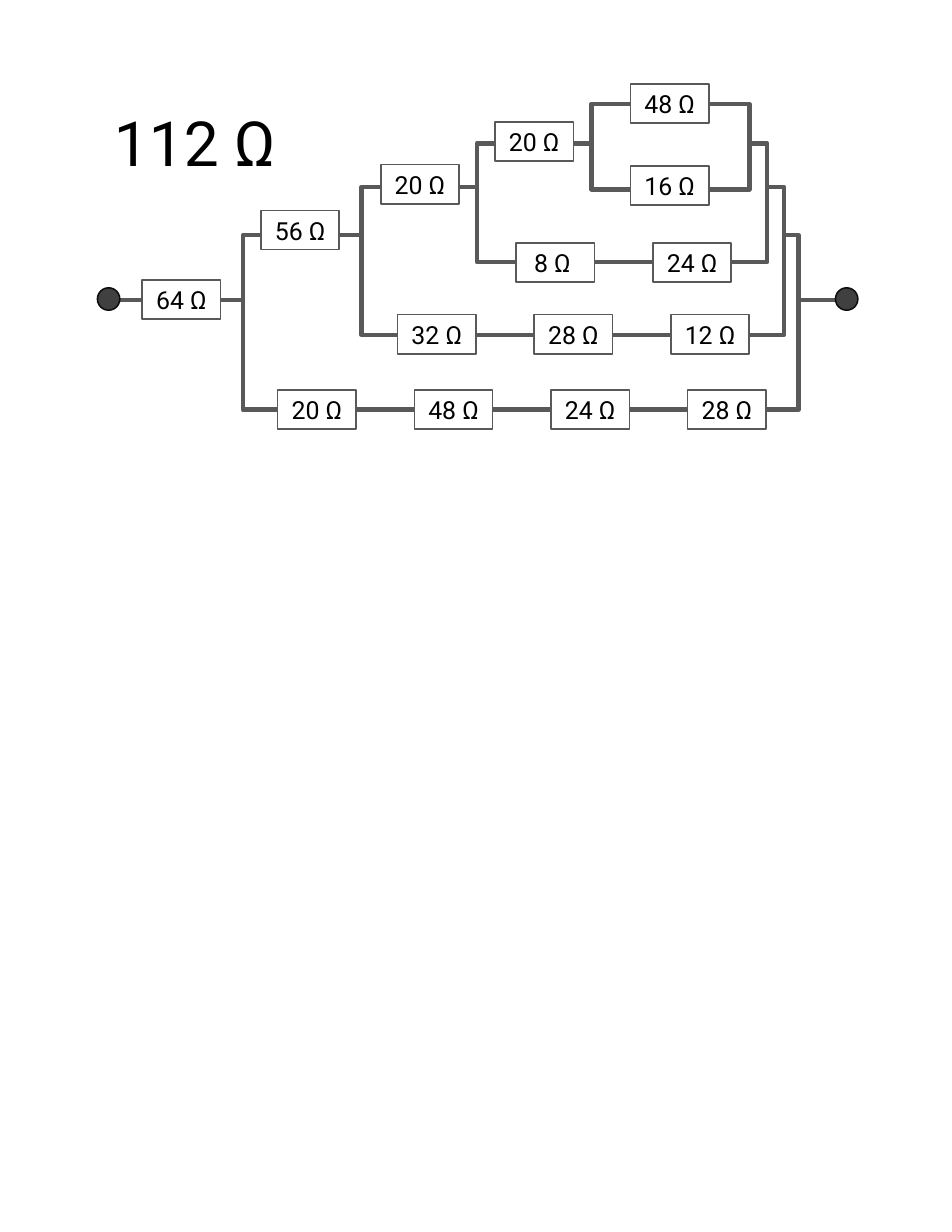
from pptx import Presentation
from pptx.dml.color import RGBColor
from pptx.enum.shapes import MSO_CONNECTOR, MSO_SHAPE
from pptx.enum.text import MSO_ANCHOR, PP_ALIGN
from pptx.oxml.ns import qn
from pptx.util import Inches, Pt
from lxml import etree

RECTANGLE, OVAL = MSO_SHAPE.RECTANGLE, MSO_SHAPE.OVAL
STRAIGHT = MSO_CONNECTOR.STRAIGHT
TOP, MIDDLE = MSO_ANCHOR.TOP, MSO_ANCHOR.MIDDLE
CENTER, RIGHT = PP_ALIGN.CENTER, PP_ALIGN.RIGHT
TITLE_ONLY = 5

COLORS = {
    "paper": "FFFFFF",
    "wire": "595959",
    "terminal": "404040",
    "terminal_edge": "0D0D0D",
    "text": "000000",
}
FONT = "Roboto"
WIRE_WIDTH = 3
RESISTOR_WIDTH, RESISTOR_HEIGHT = 0.7, 0.35
RESISTOR_STEP = 1.22
TERMINAL_SIZE = 0.2

# Nested parallel loops, outermost first: left, top, width, height
LOOPS = [
    (2.17, 2.1, 4.96, 1.56),
    (3.23, 1.67, 3.77, 1.32),
    (4.26, 1.28, 2.59, 1.06),
    (5.28, 0.93, 1.41, 0.76),
]
# Resistors in series along one wire: left, top, ohms
CHAINS = [
    (1.27, 2.5, [64]),
    (2.33, 1.88, [56]),
    (3.4, 1.47, [20]),
    (4.42, 1.09, [20]),
    (5.63, 0.75, [48]),
    (5.63, 1.48, [16]),
    (4.61, 2.17, [8, 24]),
    (3.55, 2.81, [32, 28, 12]),
    (2.48, 3.48, [20, 48, 24, 28]),
]


def color(name):
    return RGBColor.from_string(COLORS[name])


def format_text(frame, size, alignment, anchor):
    frame.vertical_anchor = anchor
    para = frame.paragraphs[0]
    para.alignment = alignment
    for span in para.runs:
        span.font.name = FONT
        span.font.size = Pt(size)
        span.font.color.rgb = color("text")


def add_box(page, kind, bounds, fill, line, line_width):
    box = page.shapes.add_shape(kind, *map(Inches, bounds))
    box.shadow.inherit = False
    box.fill.solid()
    box.fill.fore_color.rgb = color(fill)
    box.line.color.rgb = color(line)
    box.line.width = Pt(line_width)
    return box


def add_main_wire(page, left, right, y):
    wire = page.shapes.add_connector(
        STRAIGHT, Inches(left), Inches(y), Inches(right), Inches(y))
    wire.line.color.rgb = color("wire")
    wire.line.width = Pt(WIRE_WIDTH)
    etree.SubElement(wire.element.spPr, qn("a:effectLst"))


def add_terminal(page, left, top):
    bounds = (left, top, TERMINAL_SIZE, TERMINAL_SIZE)
    add_box(page, OVAL, bounds, "terminal", "terminal_edge", 1)


def add_chain(page, left, top, values):
    """Place resistors at equal steps along one wire."""
    for index, ohms in enumerate(values):
        bounds = (left + index * RESISTOR_STEP, top, RESISTOR_WIDTH, RESISTOR_HEIGHT)
        box = add_box(page, RECTANGLE, bounds, "paper", "wire", 1)
        box.text_frame.text = f"{ohms} Ω "
        format_text(box.text_frame, 16, CENTER, MIDDLE)


def set_title(page, text):
    title = page.shapes.title
    title.left, title.top = Inches(0.87), Inches(0.88)
    title.width, title.height = Inches(1.69), Inches(0.77)
    title.text_frame.text = text
    title.text_frame.word_wrap = False
    format_text(title.text_frame, 40, RIGHT, TOP)


def main():
    deck = Presentation()
    deck.slide_width, deck.slide_height = Inches(8.5), Inches(11)
    page = deck.slides.add_slide(deck.slide_layouts[TITLE_ONLY])

    set_title(page, "112 Ω")
    add_main_wire(page, 0.94, 7.54, 2.68)
    for bounds in LOOPS:
        add_box(page, RECTANGLE, bounds, "paper", "wire", WIRE_WIDTH)
    for left in (0.87, 7.46):
        add_terminal(page, left, 2.57)
    for left, top, values in CHAINS:
        add_chain(page, left, top, values)

    deck.save("out.pptx")


if __name__ == "__main__":
    main()
